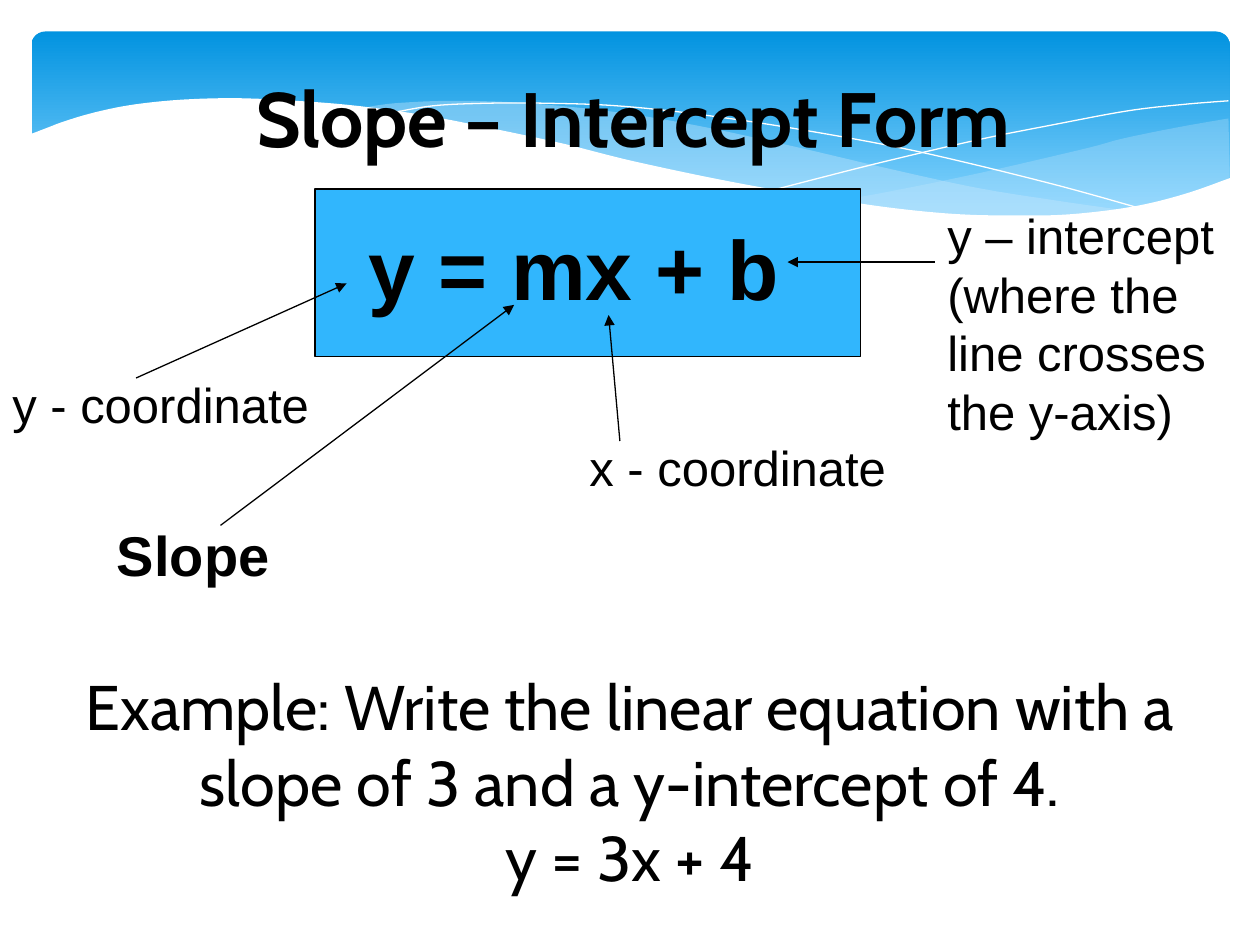
from lxml.etree import SubElement
from pptx import Presentation
from pptx.dml.color import RGBColor
from pptx.enum.shapes import MSO_CONNECTOR as Connector, MSO_SHAPE as Preset
from pptx.enum.text import MSO_ANCHOR as Anchor, MSO_AUTO_SIZE as AutoSize, PP_ALIGN as Align
from pptx.oxml.ns import qn
from pptx.util import Pt

PX = 9144  # EMU per px, 100 px to the inch
BLACK, WHITE, MIST = "000000", "FFFFFF", "C6E7FC"
BANNER_TOP, BANNER_BOTTOM, EQUATION_BLUE = "0293E0", "83D3FE", "31B6FD"
CURVE_STEPS = 8

# Wave outlines: each inner list is one smooth run, corners lie between runs
RIGHT_WAVE = [
    [(975, 94), (935, 101), (891, 110), (861, 118), (779, 137), (706, 152), (661, 160)],
    [(661, 160), (705, 165), (757, 170), (814, 172), (863, 170), (913, 162), (949, 152), (976, 141)],
]
MIDDLE_WAVE = [
    [(893, 167), (837, 159), (775, 149), (706, 134), (629, 116), (555, 100), (489, 89),
     (420, 82), (361, 80), (313, 82), (286, 86)],
    [(286, 86), (342, 94), (404, 106), (449, 116), (530, 135), (601, 150), (665, 161),
     (722, 168), (773, 172), (818, 173), (857, 171), (893, 167)],
]
LONG_CREST = [[(309, 90), (344, 84), (387, 82), (433, 82), (489, 84), (556, 91), (636, 103),
               (727, 120), (831, 145), (907, 166)]]
SHORT_CREST = [[(613, 151), (695, 130), (776, 111), (836, 99), (895, 88), (938, 83), (975, 80)]]
WHITE_WAVE = [
    [(977, 141), (940, 154), (899, 164), (850, 170), (809, 171), (761, 170), (708, 165),
     (648, 156), (579, 144), (503, 128), (447, 114), (391, 102), (340, 92), (292, 85),
     (250, 81), (193, 78), (146, 79), (106, 83), (76, 89), (52, 96), (36, 102), (23, 107)],
    [(23, 224), (977, 224)],
]


def color(hex_code):
    return RGBColor.from_string(hex_code)


def smooth(knots):
    """Catmull-Rom points, in EMU, through the knots."""
    padded = [knots[0], *knots, knots[-1]]
    points = [knots[0]]
    for a, b, c, d in zip(padded, padded[1:], padded[2:], padded[3:]):
        for step in range(1, CURVE_STEPS + 1):
            t = step / CURVE_STEPS
            points.append(tuple(
                (2 * q + (r - p) * t + (2 * p - 5 * q + 4 * r - s) * t**2
                 + (3 * q - p - 3 * r + s) * t**3) / 2
                for p, q, r, s in zip(a, b, c, d)))
    return [(round(x * PX), round(y * PX)) for x, y in points]


def add_wave(slide, runs, fill=None, opacity=100, line=None):
    points = [point for run in runs for point in smooth(run)]
    builder = slide.shapes.build_freeform(*points[0])
    builder.add_line_segments(points[1:], close=fill is not None)
    wave = builder.convert_to_shape()
    wave.shadow.inherit = False
    if fill:
        wave.fill.solid()
        wave.fill.fore_color.rgb = color(fill)
        if opacity < 100:
            tint = next(wave._element.spPr.iter(qn("a:srgbClr")))
            SubElement(tint, qn("a:alpha")).set("val", str(opacity * 1000))
    else:
        wave.fill.background()
    if line:
        wave.line.color.rgb = color(line)
        wave.line.width = Pt(0)
    else:
        wave.line.fill.background()


def add_banner(slide):
    banner = slide.shapes.add_shape(
        Preset.ROUNDED_RECTANGLE, 25 * PX, 25 * PX, 951 * PX, 156 * PX)
    banner.adjustments[0] = 0.07
    banner.shadow.inherit = False
    banner.line.fill.background()
    banner.fill.gradient()
    banner.fill.gradient_angle = 270
    stops = ((0, BANNER_TOP), (0.9, BANNER_BOTTOM))
    for stop, (position, shade) in zip(banner.fill.gradient_stops, stops):
        stop.position = position
        stop.color.rgb = color(shade)


def add_run(paragraph, text, size, font, bold=False, shade=BLACK):
    run = paragraph.add_run()
    run.text = text
    run.font.size = Pt(size)
    run.font.name = font
    run.font.bold = bold
    run.font.color.rgb = color(shade)


def set_title(slide):
    title = slide.shapes.title
    title.left, title.top, title.width, title.height = (
        length * PX for length in (0, 30, 992, 125))
    title.text_frame.vertical_anchor = Anchor.MIDDLE
    paragraph = title.text_frame.paragraphs[0]
    paragraph.alignment = Align.CENTER
    add_run(paragraph, " ", 44, "Cabin", shade=WHITE)
    add_run(paragraph, "Slope – Intercept Form", 44, "Cabin", bold=True)
    # Bring the title in front of the waves
    slide.shapes._spTree.append(title._element)


def add_text(slide, box, lines, size, font="Arial", bold=False, align=Align.LEFT):
    frame = slide.shapes.add_textbox(*(length * PX for length in box)).text_frame
    frame.word_wrap = True
    frame.auto_size = AutoSize.SHAPE_TO_FIT_TEXT if font == "Arial" else AutoSize.NONE
    for index, line in enumerate(lines):
        paragraph = frame.add_paragraph() if index else frame.paragraphs[0]
        paragraph.alignment = align
        add_run(paragraph, line, size, font, bold)


def add_equation_panel(slide):
    panel = slide.shapes.add_shape(Preset.RECTANGLE, 250 * PX, 150 * PX, 433 * PX, 133 * PX)
    panel.shadow.inherit = False
    panel.fill.solid()
    panel.fill.fore_color.rgb = color(EQUATION_BLUE)
    panel.line.color.rgb = color(BLACK)
    panel.line.width = Pt(0.75)


def add_arrow(slide, start, end):
    arrow = slide.shapes.add_connector(
        Connector.STRAIGHT, *(length * PX for length in (*start, *end)))
    arrow.line.color.rgb = color(BLACK)
    arrow.line.width = Pt(0.75)
    SubElement(arrow.line._get_or_add_ln(), qn("a:tailEnd")).set("type", "triangle")
    SubElement(arrow._element.spPr, qn("a:effectLst"))


def main():
    deck = Presentation()
    deck.slide_width, deck.slide_height = 1000 * PX, 750 * PX
    slide = deck.slides.add_slide(deck.slide_layouts[5])

    # Banner with waves
    add_banner(slide)
    add_wave(slide, RIGHT_WAVE, fill=MIST, opacity=29)
    add_wave(slide, MIDDLE_WAVE, fill=MIST, opacity=40)
    for crest in (LONG_CREST, SHORT_CREST):
        add_wave(slide, crest, line=WHITE)
    add_wave(slide, WHITE_WAVE, fill=WHITE)
    set_title(slide)

    # Equation
    add_equation_panel(slide)
    add_text(slide, (283, 167, 350, 90), ["y = mx + b"], 48, bold=True)

    # Labels, each with an arrow to its part of the equation
    labels = [
        ("y - coordinate", (0, 292, 292, 57), 28, False, (108, 300), (275, 225)),
        ("y – intercept (where the line crosses the y-axis)",
         (742, 158, 258, 199), 28, False, (742, 208), (625, 208)),
        ("x - coordinate", (458, 342, 300, 57), 28, False, (492, 350), (483, 250)),
        ("Slope", (83, 408, 675, 64), 32, True, (175, 417), (408, 242)),
    ]
    for text, box, size, bold, start, end in labels:
        add_text(slide, box, [text], size, bold=bold)
        add_arrow(slide, start, end)

    # Worked example
    add_text(slide, (0, 525, 1000, 192),
             ["Example: Write the linear equation with a slope of 3 and a y-intercept of 4.",
              "y = 3x + 4"],
             36, font="Cabin", align=Align.CENTER)

    deck.save("out.pptx")


if __name__ == "__main__":
    main()
